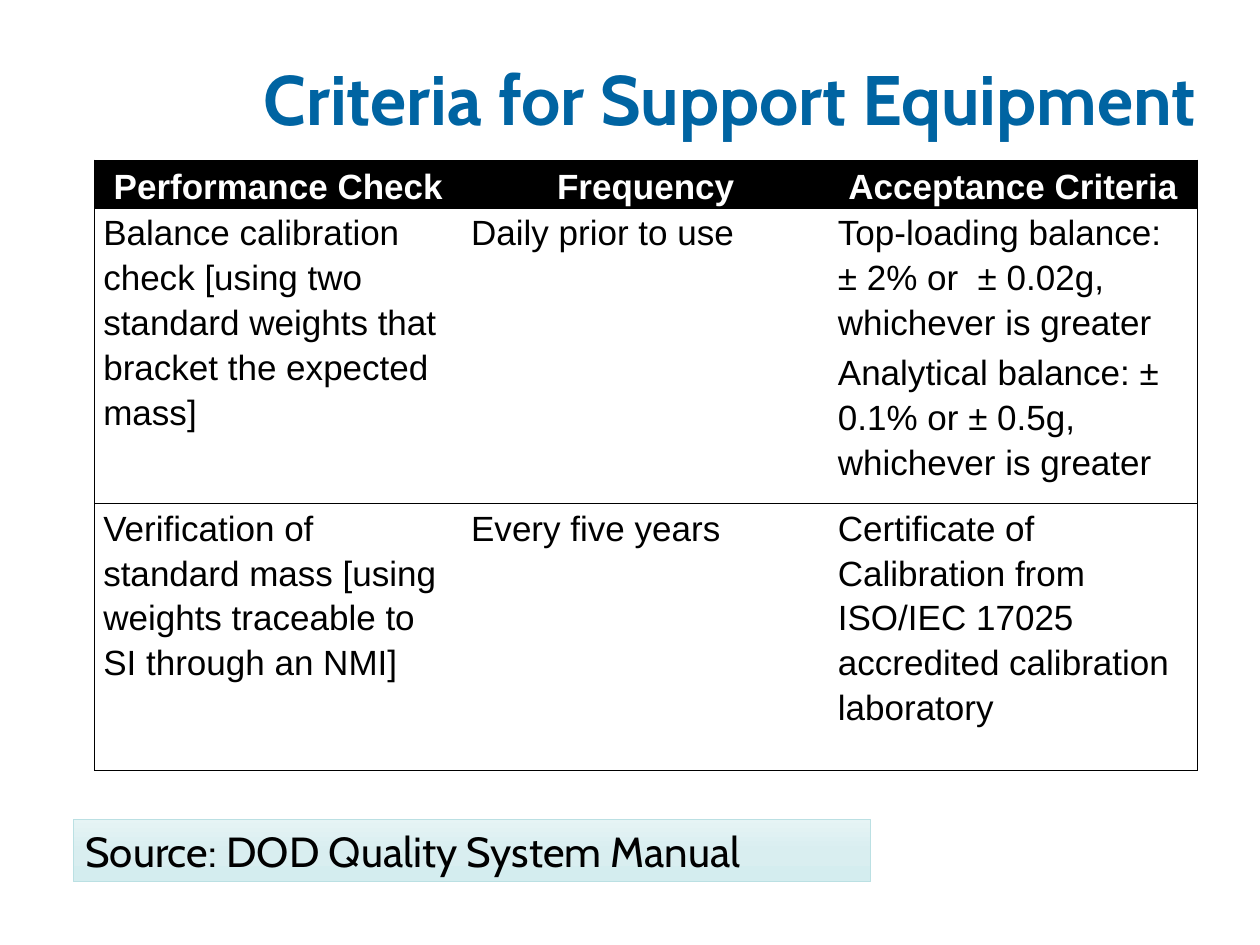
from copy import deepcopy
from dataclasses import dataclass

from lxml import etree
from pptx import Presentation
from pptx.dml.color import RGBColor
from pptx.enum import shapes, text
from pptx.oxml import ns
from pptx.util import Pt

COLORS = {
    "title": "0064A2",
    "black": "000000",
    "white": "FFFFFF",
    "source_line": "BBE0E3",
    "source_top": "E6F4F5",
    "source_middle": "D9EEF0",
    "source_bottom": "D4EDEF",
}
NO_GRID_STYLE = "{2D5ABB26-0587-4C30-8999-92F81FD0307C}"


@dataclass
class Style:
    font: str
    size: float
    color: str
    bold: bool = False


@dataclass
class Row:
    height: float
    cells: list[str]
    space_after: float = 0
    header: bool = False


ROWS = [
    Row(25.2, ["Performance Check", "Frequency", "Acceptance Criteria"], header=True),
    Row(164.9, [
        "Balance calibration check [using two standard weights that bracket the expected mass]",
        "Daily prior to use",
        "Top-loading balance: ± 2% or  ± 0.02g, whichever is greater\n"
        "Analytical balance: ± 0.1% or ± 0.5g, whichever is greater",
    ], space_after=3),
    Row(152.6, [
        "Verification of standard mass [using weights traceable to SI through an NMI]",
        "Every five years",
        "Certificate of Calibration from ISO/IEC 17025 accredited calibration laboratory",
    ], space_after=6),
]
COLUMN_WIDTHS = [210.2, 209.6, 210.2]


def rgb(name: str) -> RGBColor:
    return RGBColor.from_string(COLORS[name])


def format_runs(p, style: Style) -> None:
    for r in p.runs:
        r.font.name = style.font
        r.font.size = Pt(style.size)
        r.font.bold = style.bold
        r.font.color.rgb = rgb(style.color)


def add_border(cell, side: str) -> None:
    props = cell._tc.get_or_add_tcPr()
    ln = etree.SubElement(props, ns.qn(f"a:ln{side}"), w=str(Pt(0.5)))
    fill = etree.SubElement(ln, ns.qn("a:solidFill"))
    etree.SubElement(fill, ns.qn("a:srgbClr"), val=COLORS["black"])


def fill_cell(cell, content: str, row: Row, sides: str) -> None:
    for side in sides:
        add_border(cell, side)
    cell.margin_left = cell.margin_right = Pt(5.04)
    cell.margin_top = cell.margin_bottom = Pt(0)
    if row.header:
        cell.vertical_anchor = text.MSO_ANCHOR.MIDDLE
        cell.fill.solid()
        cell.fill.fore_color.rgb = rgb("black")
    else:
        cell.vertical_anchor = text.MSO_ANCHOR.TOP
        cell.fill.background()
    cell.text_frame.text = content
    style = Style("Arial", 20, "white" if row.header else "black", row.header)
    for p in cell.text_frame.paragraphs:
        p.alignment = text.PP_ALIGN.CENTER if row.header else text.PP_ALIGN.LEFT
        p.line_spacing = 1.15
        format_runs(p, style)
    cell.text_frame.paragraphs[0].space_after = Pt(row.space_after)


def add_criteria_table(s) -> None:
    frame = s.shapes.add_table(
        len(ROWS), len(COLUMN_WIDTHS), Pt(54), Pt(91.44),
        Pt(sum(COLUMN_WIDTHS)), Pt(sum(row.height for row in ROWS)))
    table = frame.table
    table.first_row = table.horz_banding = False
    table._tbl.tblPr.find(ns.qn("a:tableStyleId")).text = NO_GRID_STYLE
    for column, width in zip(table.columns, COLUMN_WIDTHS):
        column.width = Pt(width)
    last = len(COLUMN_WIDTHS) - 1
    for i, row in enumerate(ROWS):
        table.rows[i].height = Pt(row.height)
        for j, content in enumerate(row.cells):
            sides = ("L" if j == 0 else "") + ("R" if j == last else "") + "TB"
            fill_cell(table.cell(i, j), content, row, sides)


def add_title(s) -> None:
    sp = s.shapes.add_textbox(Pt(113.76), Pt(21.6), Pt(606.24), Pt(68.4))
    tf = sp.text_frame
    tf.word_wrap = True
    tf.vertical_anchor = text.MSO_ANCHOR.MIDDLE
    tf.text = "Criteria for Support Equipment"
    p = tf.paragraphs[0]
    p.alignment = text.PP_ALIGN.CENTER
    format_runs(p, Style("Cabin", 40, "title", True))


def add_source(s) -> None:
    sp = s.shapes.add_shape(
        shapes.MSO_SHAPE.RECTANGLE, Pt(41.76), Pt(468), Pt(455.76), Pt(36))
    sp.shadow.inherit = False
    sp.fill.gradient()
    sp.fill.gradient_angle = 270
    first = sp.fill._xPr.find(".//" + ns.qn("a:gs"))
    first.addnext(deepcopy(first))
    names = ["source_top", "source_middle", "source_bottom"]
    for i, (stop, name) in enumerate(zip(sp.fill.gradient_stops, names)):
        stop.position = i / 2
        stop.color.rgb = rgb(name)
    sp.line.color.rgb = rgb("source_line")
    sp.line.width = Pt(0.5)
    tf = sp.text_frame
    tf.word_wrap = True
    tf.auto_size = text.MSO_AUTO_SIZE.SHAPE_TO_FIT_TEXT
    tf.vertical_anchor = text.MSO_ANCHOR.TOP
    tf.text = "Source: DOD Quality System Manual"
    p = tf.paragraphs[0]
    p.alignment = text.PP_ALIGN.LEFT
    format_runs(p, Style("Cabin", 24, "black"))


def main() -> None:
    prs = Presentation()
    prs.slide_width, prs.slide_height = Pt(720), Pt(540)
    s = prs.slides.add_slide(prs.slide_layouts[6])
    add_title(s)
    add_criteria_table(s)
    add_source(s)
    prs.save("out.pptx")


if __name__ == "__main__":
    main()
